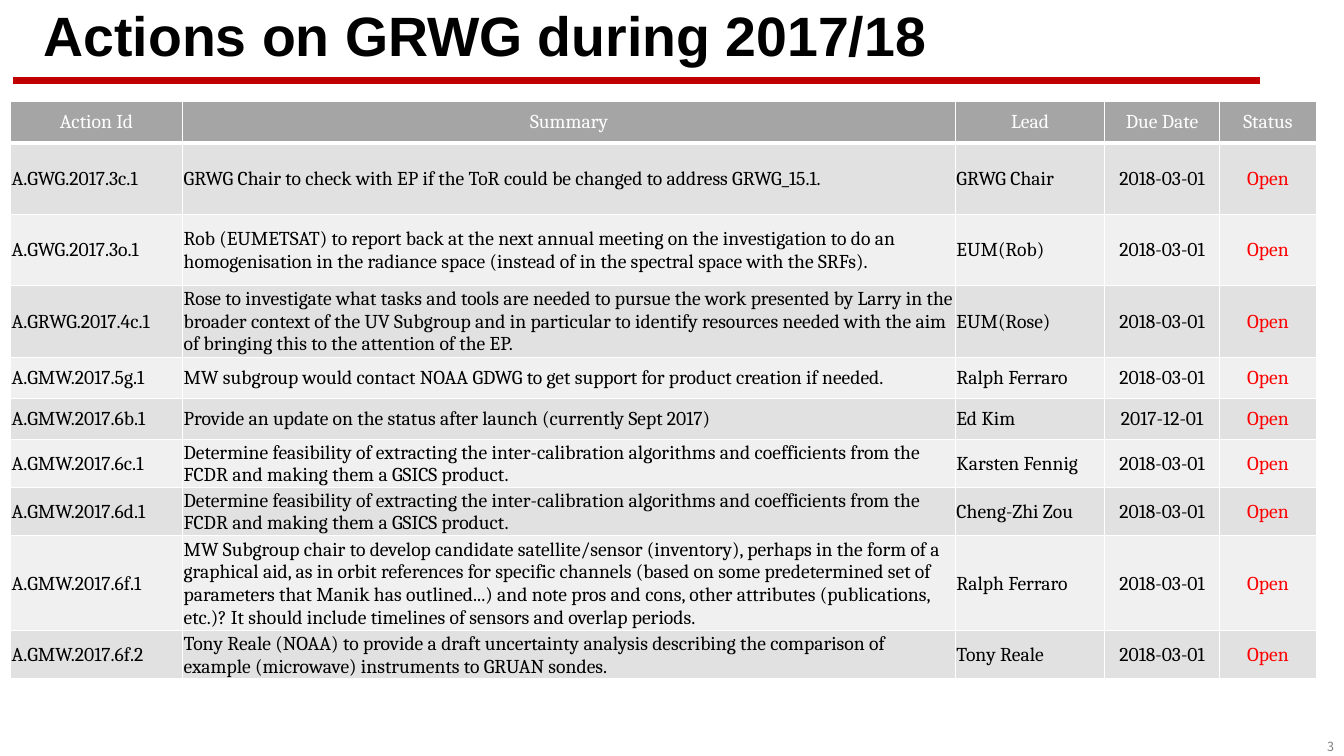
from dataclasses import dataclass

from lxml.etree import SubElement
from pptx import Presentation
from pptx.dml.color import RGBColor
from pptx.enum.shapes import MSO_CONNECTOR
from pptx.enum.text import MSO_ANCHOR, PP_ALIGN
from pptx.oxml.ns import qn
from pptx.util import Inches, Pt


@dataclass(frozen=True)
class Theme:
    title_font: str = "Arial"
    table_font: str = "Cambria"
    number_font: str = "Noto Sans CJK KR"
    title_size: float = 39.6
    table_size: float = 14
    number_size: float = 9
    ink: str = "000000"
    white: str = "FFFFFF"
    rule: str = "C00000"
    alert: str = "FF0000"
    muted: str = "808080"
    header: str = "A5A5A5"
    bands: tuple = ("E1E1E1", "F0F0F0")


# Table layout in grid units
COLUMN_WIDTHS = (20.5, 92, 17.75, 13.7, 11.5)
ROW_HEIGHTS = (4.9,) + (8.5,) * 3 + (4.9,) * 6
HEADER = ("Action Id", "Summary", "Lead", "Due Date", "Status")
FCDR_TASK = ("Determine feasibility of extracting the inter-calibration algorithms and "
             "coefficients from the FCDR and making them a GSICS product.")
ACTIONS = (
    ("A.GWG.2017.3c.1",
     "GRWG Chair to check with EP if the ToR could be changed to address GRWG_15.1.",
     "GRWG Chair", "2018-03-01"),
    ("A.GWG.2017.3o.1",
     "Rob (EUMETSAT) to report back at the next annual meeting on the investigation to do an "
     "homogenisation in the radiance space (instead of in the spectral space with the SRFs).",
     "EUM(Rob)", "2018-03-01"),
    ("A.GRWG.2017.4c.1",
     "Rose to investigate what tasks and tools are needed to pursue the work presented by Larry "
     "in the broader context of the UV Subgroup and in particular to identify resources needed "
     "with the aim of bringing this to the attention of the EP.",
     "EUM(Rose)", "2018-03-01"),
    ("A.GMW.2017.5g.1",
     "MW subgroup would contact NOAA GDWG to get support for product creation if needed.",
     "Ralph Ferraro", "2018-03-01"),
    ("A.GMW.2017.6b.1",
     "Provide an update on the status after launch (currently Sept 2017)",
     "Ed Kim", "2017-12-01"),
    ("A.GMW.2017.6c.1", FCDR_TASK, "Karsten Fennig", "2018-03-01"),
    ("A.GMW.2017.6d.1", FCDR_TASK, "Cheng-Zhi Zou", "2018-03-01"),
    ("A.GMW.2017.6f.1",
     "MW Subgroup chair to develop candidate satellite/sensor (inventory), perhaps in the form "
     "of a graphical aid, as in orbit references for specific channels (based on some "
     "predetermined set of parameters that Manik has outlined...) and note pros and cons, other "
     "attributes (publications, etc.)? It should include timelines of sensors and overlap "
     "periods.",
     "Ralph Ferraro", "2018-03-01"),
    ("A.GMW.2017.6f.2",
     "Tony Reale (NOAA) to provide a draft uncertainty analysis describing the comparison of "
     "example (microwave) instruments to GRUAN sondes.",
     "Tony Reale", "2018-03-01"),
)


class Page:
    """One slide on a grid of 160 columns by 90 rows."""

    def __init__(self, deck, theme):
        self.theme = theme
        self.column = deck.slide_width / 160
        self.row = deck.slide_height / 90
        self.slide = deck.slides.add_slide(deck.slide_layouts[6])

    def across(self, columns):
        return round(columns * self.column)

    def down(self, rows):
        return round(rows * self.row)

    def place(self, left, top, width, height):
        return self.across(left), self.down(top), self.across(width), self.down(height)

    def fill_text(self, frame, text, font, size, color, align=PP_ALIGN.LEFT, bold=False):
        para = frame.paragraphs[0]
        para.text = text
        para.alignment = align
        for span in para.runs:
            span.font.name = font
            span.font.size = Pt(size)
            span.font.bold = bold
            span.font.color.rgb = RGBColor.from_string(color)
        return para

    def text(self, area, text, *style, **options):
        frame = self.slide.shapes.add_textbox(*self.place(*area)).text_frame
        frame.word_wrap = True
        frame.vertical_anchor = MSO_ANCHOR.MIDDLE
        return self.fill_text(frame, text, *style, **options)

    def rule(self, left, right, top, color, weight):
        line = self.slide.shapes.add_connector(
            MSO_CONNECTOR.STRAIGHT, self.across(left), self.down(top),
            self.across(right), self.down(top))
        line.line.color.rgb = RGBColor.from_string(color)
        line.line.width = Pt(weight)
        SubElement(line._element.spPr, qn("a:effectLst"))

    def borders(self, cell, bottom):
        properties = cell._tc.get_or_add_tcPr()
        for side, weight in (("L", 1), ("R", 1), ("T", 1), ("B", bottom)):
            edge = SubElement(properties, qn(f"a:ln{side}"), w=str(Pt(weight)))
            fill = SubElement(edge, qn("a:solidFill"))
            SubElement(fill, qn("a:srgbClr"), val=self.theme.white)

    def cell(self, cell, text, fill, color, align, insets, bottom):
        self.borders(cell, bottom)
        cell.fill.solid()
        cell.fill.fore_color.rgb = RGBColor.from_string(fill)
        cell.vertical_anchor = MSO_ANCHOR.MIDDLE
        side, upper, lower = insets
        cell.margin_left = cell.margin_right = self.across(side)
        cell.margin_top, cell.margin_bottom = self.down(upper), self.down(lower)
        self.fill_text(cell.text_frame, text, self.theme.table_font,
                       self.theme.table_size, color, align)

    def table(self, left, top, header, records, widths, heights):
        theme = self.theme
        area = self.place(left, top, sum(widths), sum(heights))
        table = self.slide.shapes.add_table(len(heights), len(widths), *area).table
        for column, width in zip(table.columns, widths):
            column.width = self.across(width)
        for row, height in zip(table.rows, heights):
            row.height = self.down(height)
        for index, label in enumerate(header):
            self.cell(table.cell(0, index), label, theme.header, theme.white,
                      PP_ALIGN.CENTER, (1.4, 0.6, 0.6), 3)
        for number, record in enumerate(records, 1):
            band = theme.bands[(number - 1) % 2]
            for index, value in enumerate(record):
                color = theme.alert if value == "Open" else theme.ink
                align = PP_ALIGN.CENTER if index >= 3 else PP_ALIGN.LEFT
                self.cell(table.cell(number, index), value, band, color, align,
                          (0.12, 0.12, 0), 1)


def main():
    deck = Presentation()
    deck.slide_width, deck.slide_height = Inches(13.33), Inches(7.5)
    theme = Theme()
    page = Page(deck, theme)

    # Rule and slide number
    page.rule(1.56, 150, 9.6, theme.rule, 4.5)
    page.text((146.3, 87.4, 13.7, 3), "3", theme.number_font, theme.number_size,
              theme.muted, align=PP_ALIGN.RIGHT)

    # Title
    title = page.text((4, 1, 138, 7.2), "Actions on GRWG during 2017/18",
                      theme.title_font, theme.title_size, theme.ink, bold=True)
    title.line_spacing = 0.9

    # Action list, every item still open
    records = [action + ("Open",) for action in ACTIONS]
    page.table(1.25, 12.1, HEADER, records, COLUMN_WIDTHS, ROW_HEIGHTS)

    deck.save("out.pptx")


if __name__ == "__main__":
    main()
